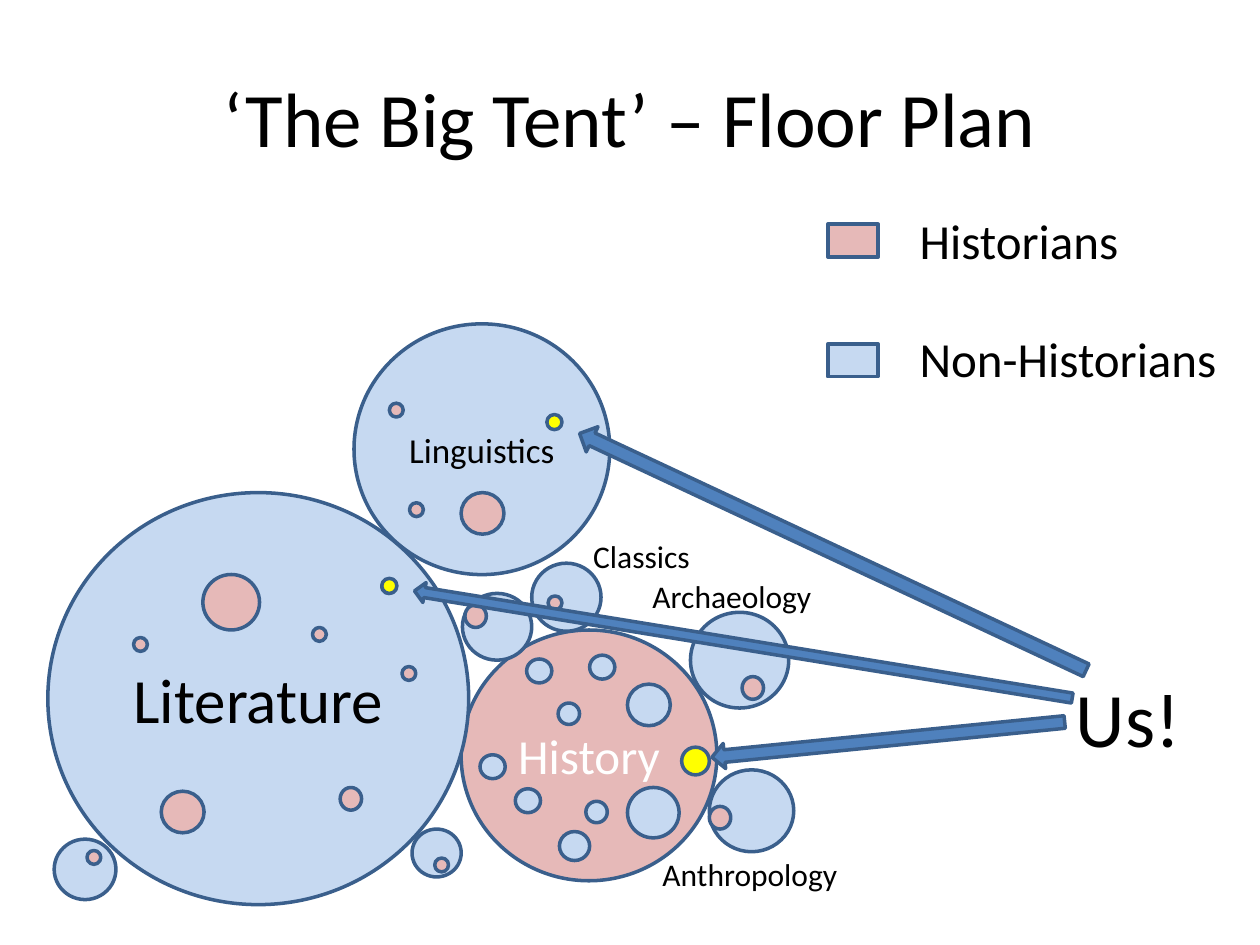
import math
import pptx
import pptx.util
import pptx.dml.color
import pptx.enum.shapes
import pptx.enum.text

RGB = pptx.dml.color.RGBColor
ROSE = RGB(0xE6, 0xB9, 0xB8)
PALE_BLUE = RGB(0xC6, 0xD9, 0xF1)
NAVY = RGB(0x3A, 0x5F, 0x8C)
BLUE = RGB(0x4F, 0x81, 0xBD)
YELLOW = RGB(0xFF, 0xFF, 0x00)
BLACK = RGB(0, 0, 0)
WHITE = RGB(0xFF, 0xFF, 0xFF)

SHAPE = pptx.enum.shapes.MSO_SHAPE
ALIGN = pptx.enum.text.PP_ALIGN
ANCHOR = pptx.enum.text.MSO_ANCHOR
FONT = "Calibri"
COLUMNS, ROWS = 1000, 750
CELL = pptx.util.Inches(10) // COLUMNS

LITERATURE = (38, 391, 334, 327)
LINGUISTICS = (281, 257, 203, 199)
HISTORY = (366, 500, 203, 199)

LITERATURE_HISTORIANS = [
    (123, 65, 45, 44), (90, 237, 34, 33), (232, 234, 17, 18), (265, 69, 11, 11),
    (281, 138, 11, 11), (210, 107, 11, 11), (68, 115, 11, 11),
]
LINGUISTICS_HISTORIANS = [(85, 134, 34, 33), (28, 63, 11, 11), (44, 142, 11, 11)]
HISTORY_OUTSIDERS = [
    (78, 160, 24, 23), (52, 23, 20, 19), (132, 43, 34, 33), (132, 125, 41, 40),
    (15, 99, 20, 19), (102, 20, 20, 19), (99, 136, 17, 17), (43, 126, 20, 19),
    (77, 58, 17, 17),
]
SMALL_FIELDS = [
    ((367, 471, 55, 53), (2, 9, 17, 18)),
    ((548, 486, 78, 76), (41, 51, 17, 18)),
    ((563, 611, 67, 65), (0, 29, 17, 18)),
    ((422, 447, 55, 54), (13, 26, 11, 11)),
    ((327, 658, 39, 38), (18, 23, 11, 11)),
    ((43, 666, 49, 48), (26, 9, 11, 11)),
]
FIELD_NAMES = [
    ("Archaeology", (508, 453, 148, 40)),
    ("Anthropology", (516, 674, 160, 40)),
    ("Classics", (461, 421, 98, 40)),
]


def write(frame, lines, size, color, align):
    frame.text = "\n".join(lines)
    for paragraph in frame.paragraphs:
        paragraph.alignment = align
        for run in paragraph.runs:
            run.font.name = FONT
            run.font.size = pptx.util.Pt(size)
            run.font.color.rgb = color


def place_shape(slide, kind, box, fill):
    shape = slide.shapes.add_shape(kind, *(round(n * CELL) for n in box))
    shape.shadow.inherit = False
    shape.fill.solid()
    shape.fill.fore_color.rgb = fill
    shape.line.color.rgb = NAVY
    shape.line.width = pptx.util.Pt(2)
    return shape


def place_text(slide, box, lines, size, align=ALIGN.LEFT, wrap=False):
    frame = slide.shapes.add_textbox(*(n * CELL for n in box)).text_frame
    frame.word_wrap = wrap
    write(frame, lines, size, BLACK, align)
    return frame


def place_field(slide, box, fill, guests, guest_fill, name="", size=18, color=BLACK):
    field = place_shape(slide, SHAPE.OVAL, box, fill)
    if name:
        field.text_frame.vertical_anchor = ANCHOR.MIDDLE
        write(field.text_frame, [name], size, color, ALIGN.CENTER)
    left, top = box[:2]
    for column, row, width, height in guests:
        place_shape(slide, SHAPE.OVAL, (left + column, top + row, width, height), guest_fill)


def place_legend(slide, box):
    left, top, width, height = box
    entries = [("Historians", ROSE), ("Non-Historians", PALE_BLUE)]
    frame = place_text(slide, (left + 63, top, width - 63, height), [name for name, _ in entries], 28)
    frame.paragraphs[1].space_before = pptx.util.Pt(34)
    for index, (_, fill) in enumerate(entries):
        place_shape(slide, SHAPE.RECTANGLE, (left, top + 16 + index * 95, 40, 26), fill)


def place_arrow(slide, tail, tip, thickness):
    across, down = tip[0] - tail[0], tip[1] - tail[1]
    length = math.hypot(across, down)
    left = (tail[0] + tip[0] - thickness) / 2
    top = (tail[1] + tip[1] - length) / 2
    arrow = place_shape(slide, SHAPE.UP_ARROW, (left, top, thickness, length), BLUE)
    arrow.rotation = math.degrees(math.atan2(across, -down)) % 360


def place_us(slide, box):
    left, top = box[:2]
    place_arrow(slide, (left + 1, top + 46), (565, 601), 20)
    place_shape(slide, SHAPE.OVAL, (541, 593, 22, 22), YELLOW)
    place_text(slide, box, ["Us!"], 44, wrap=True)
    for spot in [(434, 329), (303, 459)]:
        place_shape(slide, SHAPE.OVAL, (*spot, 12, 12), YELLOW)
    place_arrow(slide, (left + 18, top + 5), (460, 344), 22)
    place_arrow(slide, (left + 7, top + 27), (329, 469), 16)


def main():
    deck = pptx.Presentation()
    deck.slide_width, deck.slide_height = COLUMNS * CELL, ROWS * CELL
    slide = deck.slides.add_slide(deck.slide_layouts[6])
    title = place_text(slide, (50, 30, 900, 125), ["‘The Big Tent’ – Floor Plan"], 44, ALIGN.CENTER, True)
    title.vertical_anchor = ANCHOR.MIDDLE
    for name, box in FIELD_NAMES:
        place_text(slide, box, [name], 18)
    place_field(slide, HISTORY, ROSE, HISTORY_OUTSIDERS, PALE_BLUE, "History", 28, WHITE)
    place_legend(slide, (657, 162, 321, 151))
    for box, historian in SMALL_FIELDS:
        place_field(slide, box, PALE_BLUE, [historian], ROSE)
    place_field(slide, LITERATURE, PALE_BLUE, LITERATURE_HISTORIANS, ROSE, "Literature", 36)
    place_field(slide, LINGUISTICS, PALE_BLUE, LINGUISTICS_HISTORIANS, ROSE, "Linguistics", 20)
    place_us(slide, (844, 527, 134, 84))
    deck.save("out.pptx")


if __name__ == "__main__":
    main()
